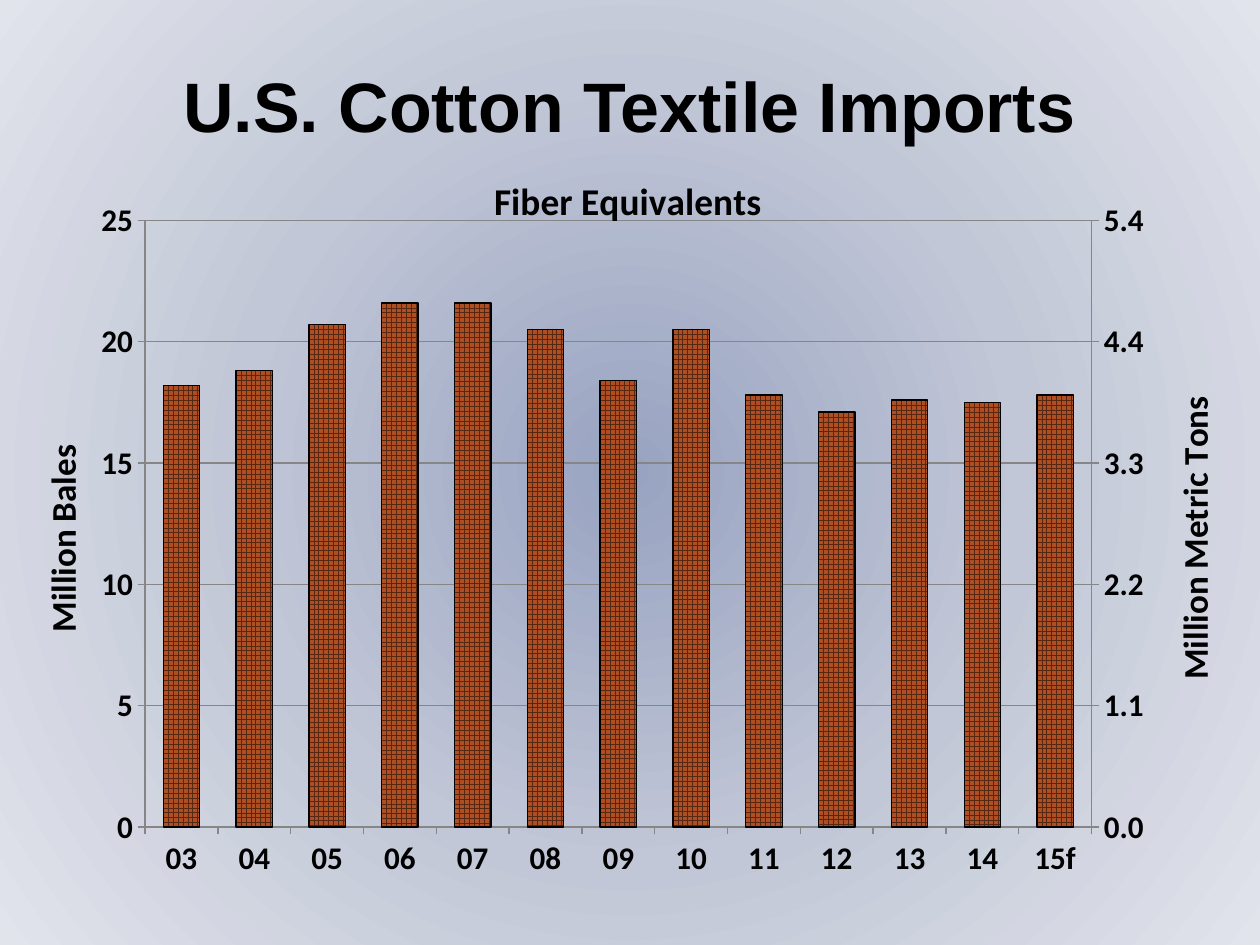
"""Build the slide on U.S. cotton textile imports."""
from copy import deepcopy

from pptx import Presentation
from pptx.chart.axis import ValueAxis
from pptx.chart.data import CategoryChartData
from pptx.dml.color import RGBColor
from pptx.enum.chart import XL_CHART_TYPE, XL_TICK_LABEL_POSITION, XL_TICK_MARK
from pptx.enum.dml import MSO_PATTERN
from pptx.enum.text import MSO_ANCHOR, PP_ALIGN
from pptx.oxml import parse_xml
from pptx.oxml.ns import nsdecls
from pptx.util import Cm, Pt

COLOURS = {"text": "000000", "grid": "868686", "bar": "AE4E22", "hatch": "572711",
           "centre": "98A3C1", "middle": "C2C7D7", "edge": "E1E4EB"}
YEARS = ["03", "04", "05", "06", "07", "08", "09", "10", "11", "12", "13", "14", "15f"]
BALES = [18.2, 18.8, 20.7, 21.6, 21.6, 20.5, 18.4, 20.5, 17.8, 17.1, 17.6, 17.5, 17.8]
TONS = [4, 4.1, 4.5, 4.7, 4.7, 4.5, 4, 4.5, 3.9, 3.7, 3.8, 3.8, 3.9]
TONS_PER_BALE = 0.217865


class SlideBuilder:
    def __init__(self, page):
        self.page = page
        self.title_font = {"name": "Arial", "size": Pt(40), "bold": True}
        self.chart_font = {"name": "Calibri", "size": Pt(18), "bold": True}

    def apply(self, target, formats):
        for name, value in formats.items():
            setattr(target, name, value)

    def style(self, font, formats):
        self.apply(font, formats)
        font.color.rgb = self.colour("text")

    def colour(self, name):
        return RGBColor.from_string(COLOURS[name])

    def background(self, stops):
        self.page.background.fill.solid()
        solid = self.page.element.xpath(".//p:bgPr/a:solidFill")[0]
        marks = "".join(f'<a:gs pos="{place * 1000}"><a:srgbClr val="{COLOURS[name]}"/></a:gs>'
                        for place, name in stops)
        solid.getparent().replace(solid, parse_xml(
            f'<a:gradFill {nsdecls("a")} rotWithShape="1"><a:gsLst>{marks}</a:gsLst>'
            '<a:path path="circle"><a:fillToRect l="50000" t="50000" r="50000" b="50000"/>'
            '</a:path></a:gradFill>'))

    def heading(self, text, *bounds):
        box = self.page.shapes.add_textbox(*map(Cm, bounds))
        self.apply(box.text_frame, {"word_wrap": True, "vertical_anchor": MSO_ANCHOR.MIDDLE})
        para = box.text_frame.paragraphs[0]
        para.alignment = PP_ALIGN.CENTER
        span = para.add_run()
        span.text = text
        self.style(span.font, self.title_font)

    def layout(self, parent, index, inner=False, **places):
        for old in parent.xpath("c:layout"):
            parent.remove(old)
        target = '<c:layoutTarget val="inner"/>' if inner else ""
        modes = '<c:xMode val="edge"/><c:yMode val="edge"/>'
        values = "".join(f'<c:{name} val="{value}"/>' for name, value in places.items())
        parent.insert(index, parse_xml(
            f'<c:layout {nsdecls("c")}><c:manualLayout>{target}{modes}{values}'
            '</c:manualLayout></c:layout>'))

    def chart_title(self, title, text, size, x, y, turned=False):
        frame = title.text_frame
        frame.text = text
        self.style(frame.paragraphs[0].runs[0].font, {**self.chart_font, "size": Pt(size)})
        if turned:
            body = title._element.xpath(".//a:bodyPr")[0]
            body.set("rot", "-5400000")
            body.set("vert", "horz")
        self.layout(title._element, 1, x=x, y=y)

    def axis_line(self, line):
        line.color.rgb = self.colour("grid")
        line.width = Pt(0.75)

    def value_axis(self, axis, text, x, y, top, number_format):
        self.apply(axis, {"minimum_scale": 0, "maximum_scale": top, "major_unit": top / 5,
                          "major_tick_mark": XL_TICK_MARK.OUTSIDE})
        self.apply(axis.tick_labels, {"number_format": number_format,
                                      "number_format_is_linked": False})
        self.axis_line(axis.format.line)
        self.chart_title(axis.axis_title, text, 20, x, y, turned=True)

    def right_axis(self, chart):
        """Move the second series to its own pair of axes and return the value axis."""
        plot_area = chart._chartSpace.chart.plotArea
        bars = plot_area.xpath("c:barChart")[0]
        second = deepcopy(bars)
        bars.remove(bars.xpath("c:ser")[1])
        second.remove(second.xpath("c:ser")[0])
        bars.addnext(second)
        category, value = (deepcopy(axis._element) for axis in (chart.category_axis, chart.value_axis))
        for element, own, cross in ((category, "101", "102"), (value, "102", "101")):
            element.xpath("c:axId")[0].set("val", own)
            element.xpath("c:crossAx")[0].set("val", cross)
        for reference, number in zip(second.xpath("c:axId"), ("101", "102")):
            reference.set("val", number)
        category.xpath("c:delete")[0].set("val", "1")
        value.xpath("c:axPos")[0].set("val", "r")
        value.xpath("c:crosses")[0].set("val", "max")
        chart.value_axis._element.addnext(value)
        value.addnext(category)
        axis = ValueAxis(value)
        axis.has_major_gridlines = False
        return axis

    def imports_chart(self, *bounds):
        data = CategoryChartData()
        data.categories = YEARS
        data.add_series("Series 1", BALES)
        data.add_series("Series 2", TONS)
        chart = self.page.shapes.add_chart(
            XL_CHART_TYPE.COLUMN_CLUSTERED, *map(Cm, bounds), data).chart
        chart.has_legend = False
        self.style(chart.font, self.chart_font)
        self.chart_title(chart.chart_title, "Fiber Equivalents", 21.6, 0.386, 0.027)
        chart.chart_title.include_in_layout = True
        self.apply(chart.plots[0], {"gap_width": 100, "vary_by_categories": False})
        self.apply(chart.category_axis, {"major_tick_mark": XL_TICK_MARK.OUTSIDE,
                                         "tick_label_position": XL_TICK_LABEL_POSITION.LOW})
        self.axis_line(chart.category_axis.format.line)
        self.axis_line(chart.value_axis.major_gridlines.format.line)
        self.value_axis(chart.value_axis, "Million Bales", 0, 0.383, 25, "0")
        self.value_axis(self.right_axis(chart), "Million Metric Tons", 0.959, 0.317,
                        25 * TONS_PER_BALE, "#,##0.0")
        self.layout(chart._chartSpace.chart.plotArea, 0, inner=True,
                    x=0.096, y=0.097, w=0.802, h=0.804)
        bales, tons = (plot.series[0].format for plot in chart.plots)
        bales.fill.patterned()
        bales.fill.pattern = MSO_PATTERN.LARGE_GRID
        bales.fill.fore_color.rgb = self.colour("hatch")
        bales.fill.back_color.rgb = self.colour("bar")
        bales.line.color.rgb = self.colour("text")
        bales.line.width = Pt(0.75)
        tons.fill.background()
        tons.line.fill.background()


def main():
    deck = Presentation()
    deck.slide_width, deck.slide_height = Cm(25.4), Cm(19.05)
    builder = SlideBuilder(deck.slides.add_slide(deck.slide_layouts[6]))
    builder.background([(0, "centre"), (50, "middle"), (100, "edge")])
    builder.heading("U.S. Cotton Textile Imports", 0.64, 0.84, 24.1, 2.54)
    builder.imports_chart(0.64, 2.97, 24.1, 15.21)
    deck.save("out.pptx")


if __name__ == "__main__":
    main()
